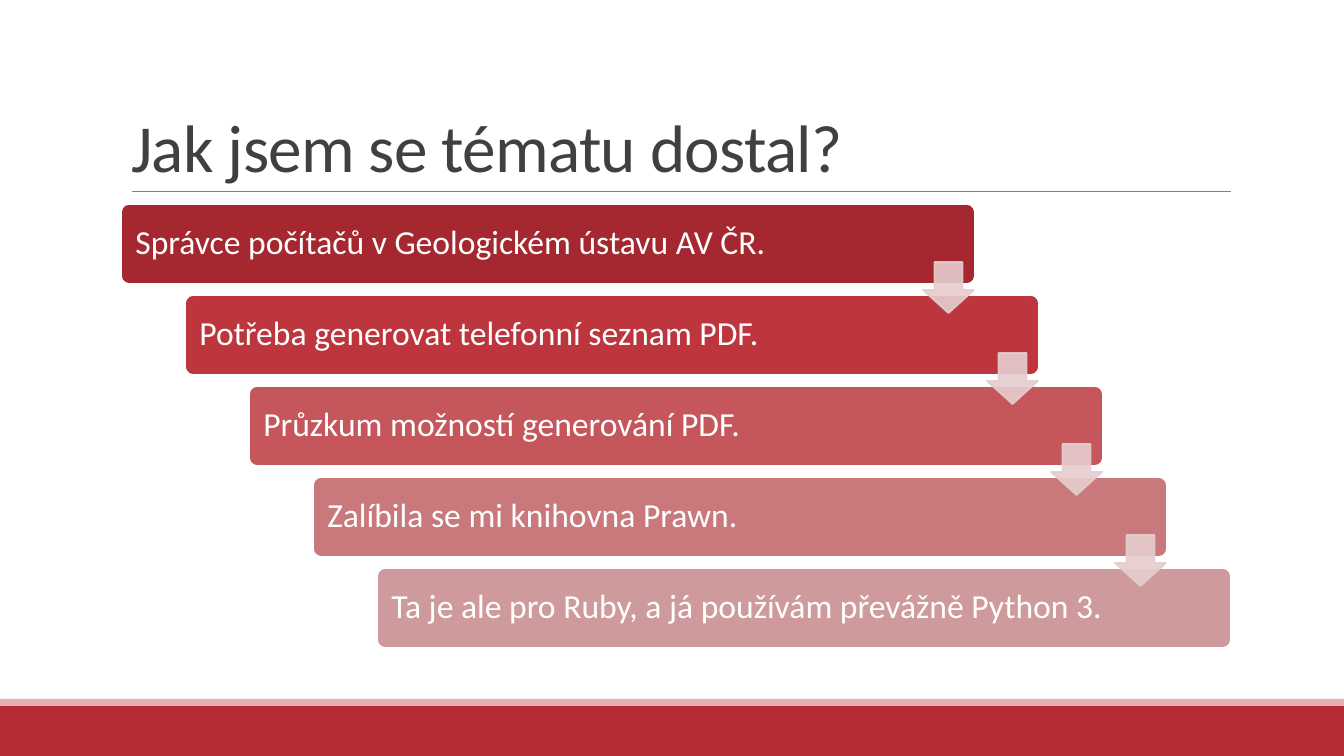
from dataclasses import dataclass

from lxml.etree import SubElement
from pptx import Presentation
from pptx.dml.color import RGBColor
from pptx.enum.shapes import MSO_CONNECTOR, MSO_SHAPE
from pptx.enum.text import MSO_ANCHOR, MSO_AUTO_SIZE, PP_ALIGN
from pptx.oxml.ns import qn
from pptx.util import Pt

RECT = MSO_SHAPE.RECTANGLE
ROUND = MSO_SHAPE.ROUNDED_RECTANGLE
DOWN = MSO_SHAPE.DOWN_ARROW
LINE = MSO_CONNECTOR.STRAIGHT
LEFT = PP_ALIGN.LEFT
MIDDLE = MSO_ANCHOR.MIDDLE
BOTTOM = MSO_ANCHOR.BOTTOM
NO_FIT = MSO_AUTO_SIZE.NONE
WIDE, HIGH = 1344, 756
SCALE = 12192000 / WIDE


@dataclass(frozen=True)
class Theme:
    font: str = "Calibri"
    head: int = 48
    body: int = 24
    ink: str = "404040"
    white: str = "FFFFFF"
    rule: str = "808080"
    band: str = "B62B34"
    stripe: str = "E4B0B3"
    arrow: str = "E5CDCE"
    steps: tuple = ("A5272F", "BD363E", "C5565B", "C9797C", "CF9A9C")


def px(*nums):
    return [round(n * SCALE) for n in nums]


def rgb(code):
    return RGBColor.from_string(code)


class Board:
    """Draws the slide's elements in one theme, with lengths in px."""

    def __init__(self, slide, theme):
        self.slide = slide
        self.theme = theme

    def style(self, para, size, color, space):
        para.alignment = LEFT
        para.line_spacing = space
        para.font.name = self.theme.font
        para.font.size = Pt(size)
        para.font.color.rgb = rgb(color)

    def title(self, text, *box):
        shape = self.slide.shapes.title
        shape.left, shape.top, shape.width, shape.height = px(*box)
        frame = shape.text_frame
        frame.text = text
        frame.auto_size = NO_FIT
        frame.vertical_anchor = BOTTOM
        para = frame.paragraphs[0]
        self.style(para, self.theme.head, self.theme.ink, 0.85)
        para.runs[0]._r.get_or_add_rPr().set("spc", "-50")

    def shape(self, kind, fill, *box, edge=None, adjust=()):
        shape = self.slide.shapes.add_shape(kind, *px(*box))
        shape.shadow.inherit = False
        shape.fill.solid()
        shape.fill.fore_color.rgb = rgb(fill)
        for i, value in enumerate(adjust):
            shape.adjustments[i] = value
        if edge:
            shape.line.color.rgb = rgb(edge)
            shape.line.width = Pt(1.25)
        else:
            shape.line.fill.background()
        return shape

    def rule(self, *ends):
        line = self.slide.shapes.add_connector(LINE, *px(*ends))
        line.line.color.rgb = rgb(self.theme.rule)
        line.line.width = Pt(0.5)
        SubElement(line._element.spPr, qn("a:effectLst"))

    def step(self, text, fill, *box):
        bar = self.shape(ROUND, fill, *box, edge=self.theme.white, adjust=(0.1,))
        frame = bar.text_frame
        frame.text = text
        frame.word_wrap = True
        frame.vertical_anchor = MIDDLE
        frame.margin_left = frame.margin_right = px(12)[0]
        self.style(frame.paragraphs[0], self.theme.body, self.theme.white, 0.9)

    def arrow(self, *box):
        tint = self.theme.arrow
        arrow = self.shape(DOWN, tint, *box, edge=tint, adjust=(0.55, 0.45))
        for color in arrow._element.spPr.iter(qn("a:srgbClr")):
            SubElement(color, qn("a:alpha"), val="90000")


def main():
    theme = Theme()
    deck = Presentation()
    deck.slide_width, deck.slide_height = px(WIDE, HIGH)
    board = Board(deck.slides.add_slide(deck.slide_layouts[5]), theme)
    board.shape(RECT, theme.band, 0, 706, WIDE, 50)
    board.shape(RECT, theme.stripe, 0, 699, WIDE, 7)
    board.rule(132, 191, 1231, 191)
    board.title("Jak jsem se tématu dostal?", 121, 31, 1109, 160)

    texts = (
        "Správce počítačů v Geologickém ústavu AV ČR.",
        "Potřeba generovat telefonní seznam PDF.",
        "Průzkum možností generování PDF.",
        "Zalíbila se mi knihovna Prawn.",
        "Ta je ale pro Ruby, a já používám převážně Python 3.",
    )
    spots = [(121 + 64 * i, 204 + 91 * i) for i in range(len(texts))]
    for text, fill, (x, y) in zip(texts, theme.steps, spots):
        board.step(text, fill, x, y, 854, 80)
    for x, y in spots[:-1]:
        board.arrow(x + 802, y + 58, 51, 51)
    deck.save("out.pptx")


if __name__ == "__main__":
    main()
